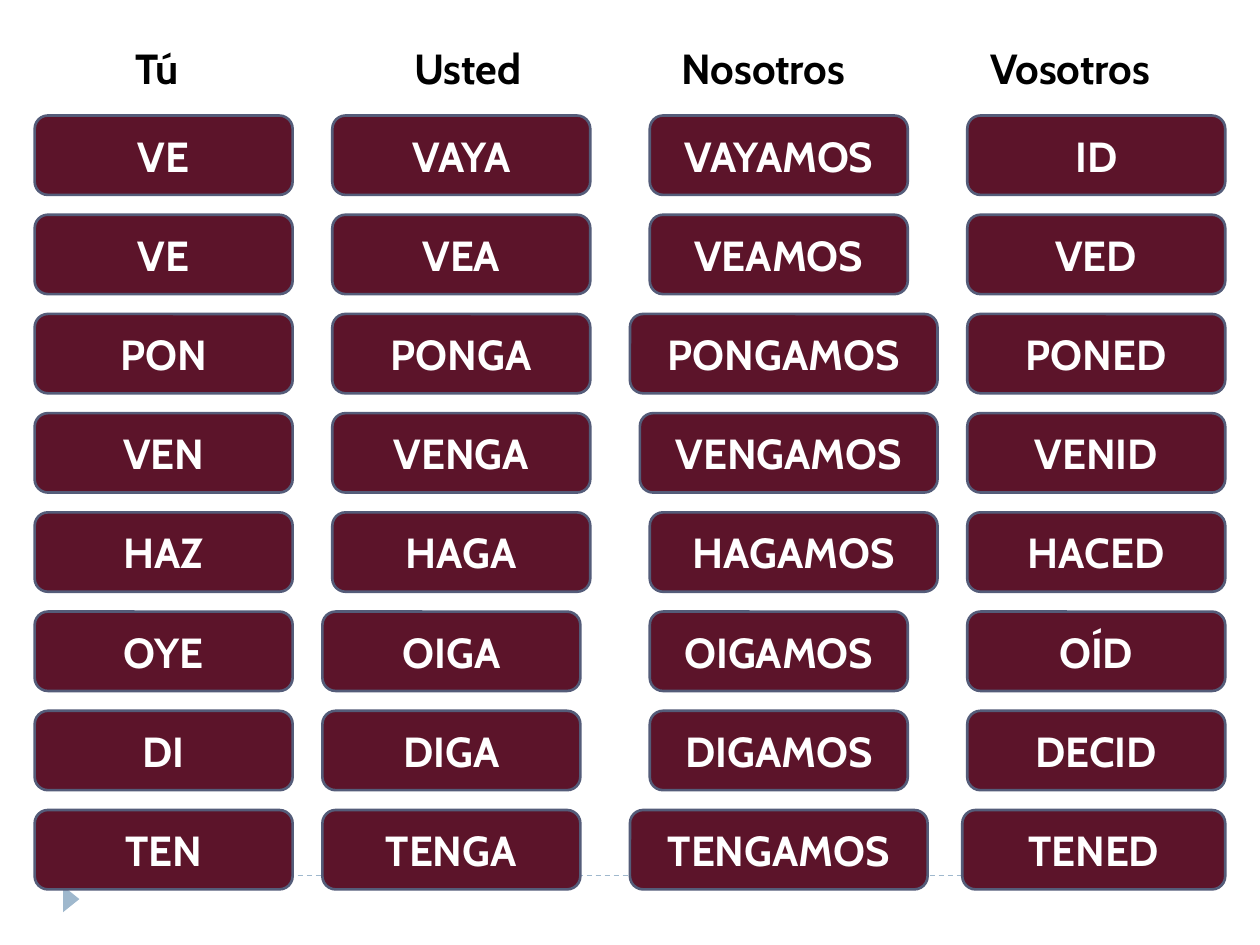
"""Build a slide of Spanish command forms in four columns."""
from lxml import etree
from pptx import Presentation
from pptx.dml.color import RGBColor
from pptx.enum.dml import MSO_LINE
from pptx.enum.shapes import MSO_CONNECTOR, MSO_SHAPE
from pptx.enum.text import MSO_ANCHOR, MSO_AUTO_SIZE, PP_ALIGN
from pptx.oxml.ns import qn
from pptx.util import Cm, Pt

ROUND = MSO_SHAPE.ROUNDED_RECTANGLE
WEDGE = MSO_SHAPE.ISOSCELES_TRIANGLE
STRAIGHT = MSO_CONNECTOR.STRAIGHT
DASH = MSO_LINE.DASH
MIDDLE, TOP = MSO_ANCHOR.MIDDLE, MSO_ANCHOR.TOP
CENTER, LEFT = PP_ALIGN.CENTER, PP_ALIGN.LEFT
GROW = MSO_AUTO_SIZE.SHAPE_TO_FIT_TEXT

WINE = RGBColor(0x5C, 0x14, 0x2A)
SLATE = RGBColor(0x54, 0x5C, 0x79)
SKY = RGBColor(0x9F, 0xB8, 0xCD)
WHITE = RGBColor(0xFF, 0xFF, 0xFF)
BLACK = RGBColor(0x00, 0x00, 0x00)

HEADS = [
    ("Tú", 2.49, 1.63),
    ("Usted", 8.1, 2.9),
    ("Nosotros", 13.49, 4.19),
    ("Vosotros", 19.71, 4.01),
]
VERBS = [
    ("VE", "VAYA", "VAYAMOS", "ID"),
    ("VE", "VEA", "VEAMOS", "VED"),
    ("PON", "PONGA", "PONGAMOS", "PONED"),
    ("VEN", "VENGA", "VENGAMOS", "VENID"),
    ("HAZ", "HAGA", "HAGAMOS", "HACED"),
    ("OYE", "OIGA", "OIGAMOS", "OÍD"),
    ("DI", "DIGA", "DIGAMOS", "DECID"),
    ("TEN", "TENGA", "TENGAMOS", "TENED"),
]
LEFTS = (0.7, 6.7, 13.1, 19.5)
WIDE, HIGH, FIRST, STEP = 5.2, 1.6, 2.33, 2
ODD = {
    "PONGAMOS": (12.7, 6.2),
    "VENGAMOS": (12.9, 6),
    "HAGAMOS": (13.1, 5.8),
    "OIGA": (6.5, WIDE),
    "DIGA": (6.5, WIDE),
    "TENGA": (6.5, WIDE),
    "TENGAMOS": (12.7, 6),
    "TENED": (19.4, 5.3),
}


def write(shape, text, color=WHITE, align=CENTER, anchor=MIDDLE, wrap=True):
    """Put bold text in a shape."""
    frame = shape.text_frame
    frame.word_wrap = wrap
    frame.vertical_anchor = anchor
    para = frame.paragraphs[0]
    para.alignment = align
    run = para.add_run()
    run.text = text
    font = run.font
    font.name, font.size, font.bold = "Cabin", Pt(24), True
    font.color.rgb = color


def draw(shapes, kind, box, fill):
    """Add a plain filled shape."""
    shape = shapes.add_shape(kind, *map(Cm, box))
    shape.shadow.inherit = False
    shape.fill.solid()
    shape.fill.fore_color.rgb = fill
    return shape


def main():
    """Lay out the slide and save it."""
    deck = Presentation()
    deck.slide_width, deck.slide_height = Cm(25.4), Cm(19.05)
    shapes = deck.slides.add_slide(deck.slide_layouts[6]).shapes

    rule = shapes.add_connector(STRAIGHT, Cm(1.27), Cm(17.65), Cm(24.13), Cm(17.65))
    rule.line.color.rgb = SKY
    rule.line.width = Pt(0.75)
    rule.line.dash_style = DASH
    etree.SubElement(rule._element.spPr, qn("a:effectLst"))

    wedge = draw(shapes, WEDGE, (1.17, 17.96, 0.53, 0.33), SKY)
    wedge.line.fill.background()
    wedge.rotation = 90

    for text, left, width in HEADS:
        head = shapes.add_textbox(Cm(left), Cm(0.74), Cm(width), Cm(1.27))
        write(head, text, color=BLACK, align=LEFT, anchor=TOP, wrap=False)
        head.text_frame.auto_size = GROW

    for row, verbs in enumerate(VERBS):
        for text, start in zip(verbs, LEFTS):
            left, width = ODD.get(text, (start, WIDE))
            card = draw(shapes, ROUND, (left, FIRST + row * STEP, width, HIGH), WINE)
            card.line.color.rgb = SLATE
            card.line.width = Pt(1.5)
            write(card, text)

    deck.save("out.pptx")


if __name__ == "__main__":
    main()
